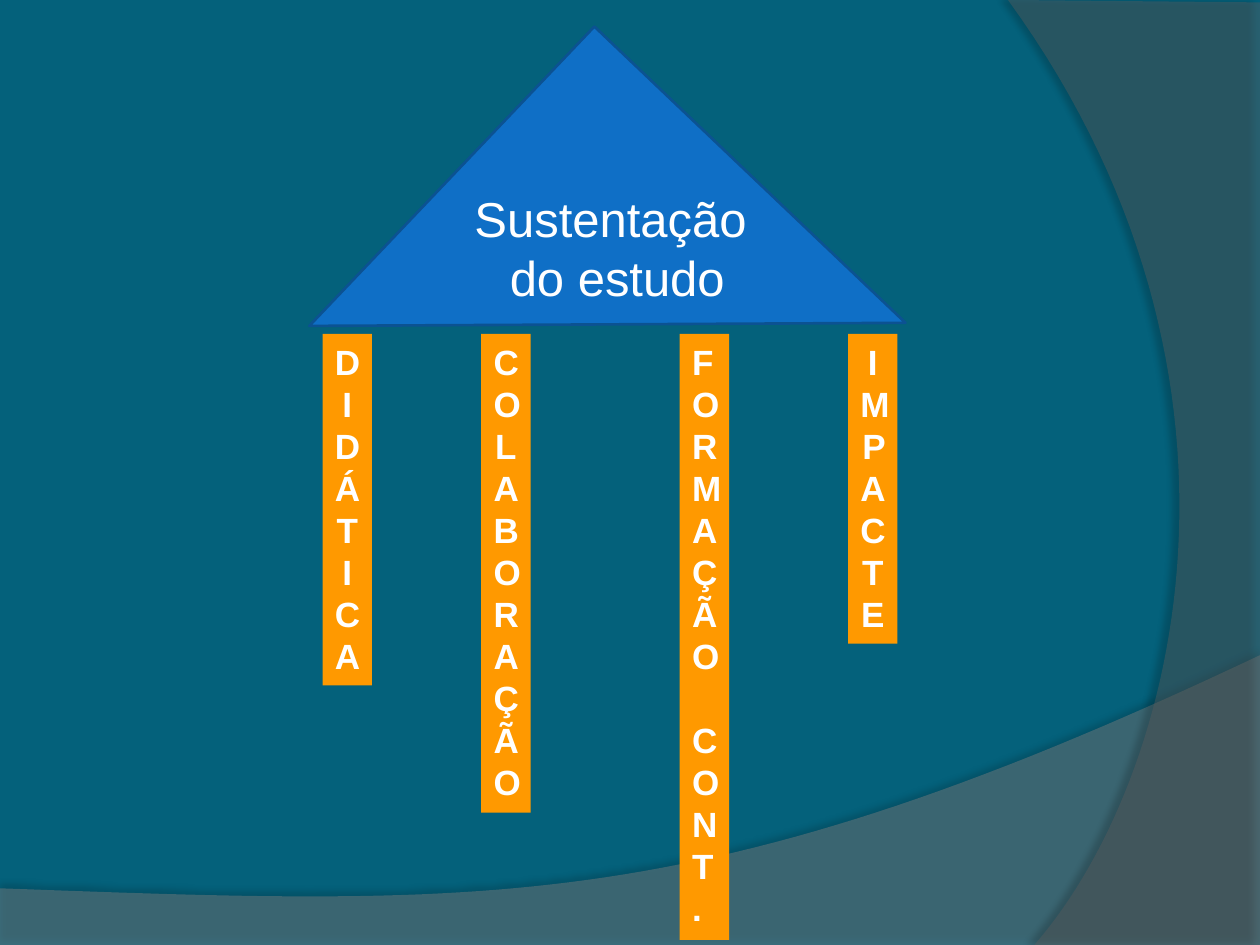
"""Build a slide showing a study's roof resting on four lettered pillars."""
from lxml.etree import SubElement
from pptx import Presentation
from pptx.dml.color import RGBColor
from pptx.enum.shapes import MSO_SHAPE
from pptx.enum.text import MSO_ANCHOR, PP_ALIGN
from pptx.oxml.ns import qn
from pptx.util import Pt

COLORS = {
    "background": "04617B",
    "lower_wave": "7F7F7F",
    "right_wave": "5E5E5E",
    "shadow": "000000",
    "roof": "0F6FC6",
    "roof_line": "0B5292",
    "pillar": "FF9900",
    "text": "FFFFFF",
}
CURVE_STEPS = 60


def curve_points(start, control_1, control_2, end):
    points = []
    for step in range(CURVE_STEPS + 1):
        t = step / CURVE_STEPS
        weights = ((1 - t) ** 3, 3 * t * (1 - t) ** 2, 3 * t**2 * (1 - t), t**3)
        corners = (start, control_1, control_2, end)
        points.append(tuple(sum(w * c[axis] for w, c in zip(weights, corners)) for axis in (0, 1)))
    return points


def write_paragraphs(text_frame, lines, size, bold, alignment):
    text_frame.word_wrap = True
    text_frame.vertical_anchor = MSO_ANCHOR.TOP
    for index, line in enumerate(lines):
        paragraph = text_frame.add_paragraph() if index else text_frame.paragraphs[0]
        paragraph.alignment = alignment
        run = paragraph.add_run()
        run.text = line
        run.font.name = "Arial"
        run.font.size = Pt(size)
        run.font.bold = bold
        run.font.color.rgb = RGBColor.from_string(COLORS["text"])


presentation = Presentation()
presentation.slide_width = Pt(720)
presentation.slide_height = Pt(540)
slide = presentation.slides.add_slide(presentation.slide_layouts[6])
slide.background.fill.solid()
slide.background.fill.fore_color.rgb = RGBColor.from_string(COLORS["background"])

lower_edge = curve_points((720, 374.4), (402.5, 524.9), (281.5, 517.7), (0, 507.6))
right_edge = curve_points((591.1, 540), (673.2, 445.7), (733, 216), (576, 0))
waves = [
    ("lower_wave", [(0, 540.7), (720, 540.7)] + lower_edge, 45, (35, 4, 3.5, 270)),
    ("right_wave", [(720, 1.4), (720, 540)] + right_edge, 40, (45, 4, 4, 180)),
]
for name, outline, opacity, (shadow_opacity, blur, distance, direction) in waves:
    points = [(Pt(x), Pt(y)) for x, y in outline]
    builder = slide.shapes.build_freeform(*points[0])
    builder.add_line_segments(points[1:], close=True)
    wave = builder.convert_to_shape()
    wave.line.fill.background()
    wave.fill.solid()
    wave.fill.fore_color.rgb = RGBColor.from_string(COLORS[name])
    fill_color = wave.element.spPr.find(qn("a:solidFill")).find(qn("a:srgbClr"))
    SubElement(fill_color, qn("a:alpha"), val=str(opacity * 1000))
    wave.shadow.inherit = False
    shadow = SubElement(
        wave.element.spPr.find(qn("a:effectLst")),
        qn("a:outerShdw"),
        blurRad=str(Pt(blur)),
        dist=str(Pt(distance)),
        dir=str(direction * 60000),
        rotWithShape="0",
    )
    shadow_color = SubElement(shadow, qn("a:srgbClr"), val=COLORS["shadow"])
    SubElement(shadow_color, qn("a:alpha"), val=str(shadow_opacity * 1000))

roof = slide.shapes.add_shape(MSO_SHAPE.RIGHT_TRIANGLE, Pt(229), Pt(62.6), Pt(236.2), Pt(245.5))
roof.rotation = 133.6
roof.shadow.inherit = False
roof.fill.solid()
roof.fill.fore_color.rgb = RGBColor.from_string(COLORS["roof"])
roof.line.color.rgb = RGBColor.from_string(COLORS["roof_line"])
roof.line.width = Pt(1.5)

title = slide.shapes.add_textbox(Pt(229.7), Pt(104.4), Pt(238.3), Pt(74.9))
write_paragraphs(title.text_frame, ["Sustentação", " do estudo"], 28, False, PP_ALIGN.CENTER)

pillars = [
    (184.3, 200.9, ["DIDÁT", "I", "CA"], PP_ALIGN.CENTER),
    (275, 273.6, ["COLABORAÇÃO"], PP_ALIGN.CENTER),
    (388.4, 346.3, ["FORMAÇÃO CONT."], PP_ALIGN.LEFT),
    (484.6, 177, ["IMPACTE"], PP_ALIGN.CENTER),
]
for left, height, lines, alignment in pillars:
    pillar = slide.shapes.add_shape(MSO_SHAPE.RECTANGLE, Pt(left), Pt(190.8), Pt(28.2), Pt(height))
    pillar.shadow.inherit = False
    pillar.fill.solid()
    pillar.fill.fore_color.rgb = RGBColor.from_string(COLORS["pillar"])
    pillar.line.fill.background()
    write_paragraphs(pillar.text_frame, lines, 20, True, alignment)

presentation.save("out.pptx")
